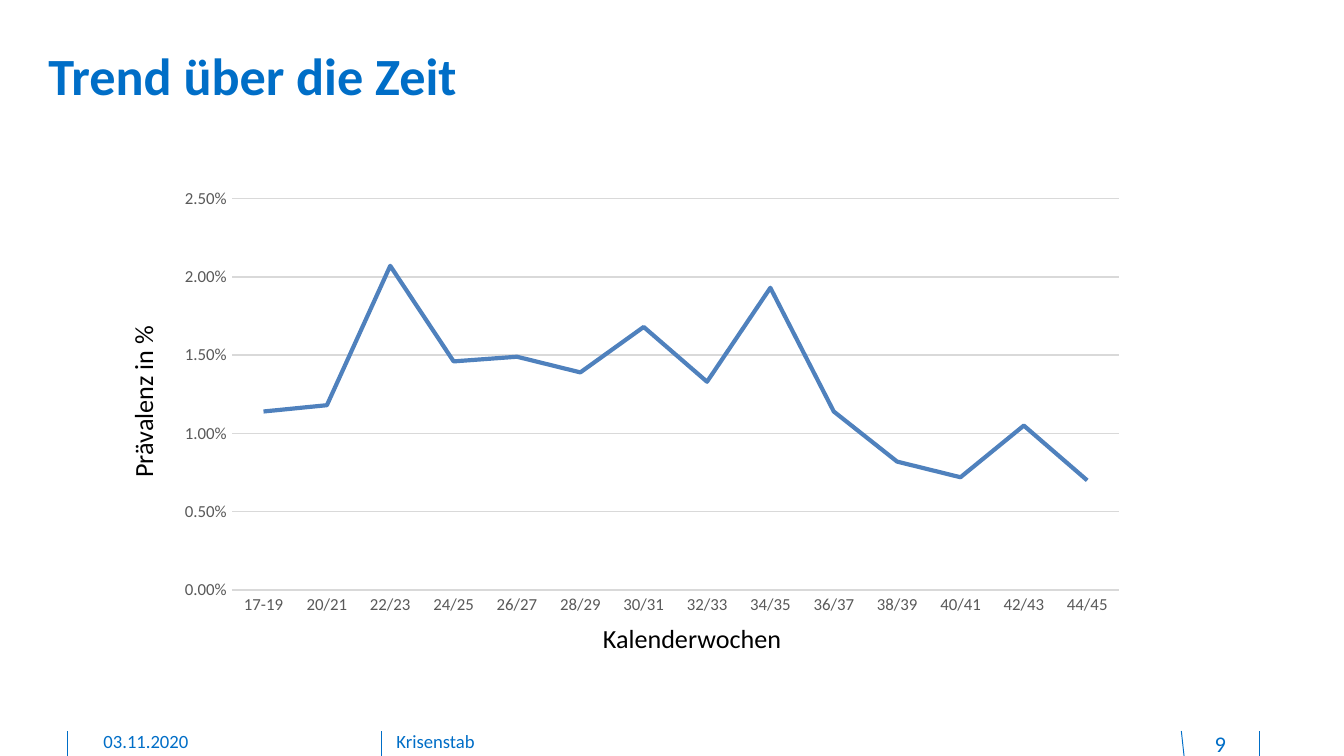
import pptx
import pptx.chart.data
import pptx.dml.color
import pptx.enum.chart
import pptx.enum.shapes
import pptx.enum.text
import pptx.oxml
import pptx.oxml.ns
import pptx.util

COLORS = {"blue": "006EC7", "series": "4F81BD", "grid": "D9D9D9", "label": "595959", "black": "000000"}
FONT = "Calibri"
ALIGN = pptx.enum.text.PP_ALIGN
WEEKS = ["17-19"] + [f"{w}/{w + 1}" for w in range(20, 45, 2)]
PREVALENCE = [0.0114, 0.0118, 0.0207, 0.0146, 0.0149, 0.0139, 0.0168,
              0.0133, 0.0193, 0.0114, 0.0082, 0.0072, 0.0105, 0.007]


def rgb(name):
    """Return the palette colour of that name."""
    return pptx.dml.color.RGBColor.from_string(COLORS[name])


def share(box, x, y, w, h):
    """Return the part of a box given in percent of its size."""
    left, top, width, height = box
    return (round(left + width * x / 100), round(top + height * y / 100),
            round(width * w / 100), round(height * h / 100))


def set_font(font, size, color, bold=False):
    """Apply the deck's font with the given size and colour."""
    values = {"name": FONT, "size": pptx.util.Pt(size), "bold": bold}
    for name, value in values.items():
        setattr(font, name, value)
    font.color.rgb = rgb(color)


def set_line(line, color, width):
    """Give a line its colour and width."""
    line.color.rgb = rgb(color)
    line.width = pptx.util.Pt(width)


def add_text(s, box, text, size, color, align=ALIGN.LEFT, bold=False, margins=(0, 0, 0, 0)):
    """Add a one-line text box and return it."""
    sp = s.shapes.add_textbox(*box)
    tf = sp.text_frame
    tf.word_wrap = True
    for side, margin in zip(("left", "top", "right", "bottom"), margins):
        setattr(tf, f"margin_{side}", pptx.util.Inches(margin))
    p = tf.paragraphs[0]
    p.alignment = align
    r = p.add_run()
    r.text = text
    set_font(r.font, size, color, bold)
    return sp


def add_header(s, box):
    """Place the slide title."""
    add_text(s, share(box, 3.6, 40.6, 88.5, 59.4), "Trend über die Zeit", 28, "blue", bold=True)


def add_trend(s, box):
    """Place the line chart with its two axis titles."""
    data = pptx.chart.data.CategoryChartData(number_format="0.00%")
    data.categories = WEEKS
    data.add_series("Series 1", PREVALENCE)
    kind = pptx.enum.chart.XL_CHART_TYPE.LINE
    chart = s.shapes.add_chart(kind, *share(box, 12.3, 0, 72.4, 92.2), data).chart
    chart.has_legend = chart.has_title = False
    set_font(chart.font, 10, "black")

    plot = chart.plots[0]
    plot.vary_by_categories = False
    series = plot.series[0]
    series.smooth = False
    set_line(series.format.line, "series", 2.25)

    for axis in (chart.category_axis, chart.value_axis):
        axis.major_tick_mark = pptx.enum.chart.XL_TICK_MARK.NONE
        set_font(axis.tick_labels.font, 9, "label")
    set_line(chart.category_axis.format.line, "grid", 0.75)

    axis = chart.value_axis
    axis.format.line.fill.background()
    set_line(axis.major_gridlines.format.line, "grid", 0.75)
    axis.tick_labels.number_format = "0.00%"
    axis.tick_labels.number_format_is_linked = False

    titles = [("Kalenderwochen", (37.6, 90.5, 27.8, 9.5), 0),
              ("Prävalenz in %", (-3.2, 41.3, 27.7, 9.5), 270)]
    for text, part, rotation in titles:
        sp = add_text(s, share(box, *part), text, 14, "black", ALIGN.CENTER,
                      margins=(0.1, 0.05, 0.1, 0.05))
        sp.rotation = rotation


def add_footer(s, box):
    """Place the footer's dividers, date, name and page number."""
    for x, lean in ((5, 0), (28.4, 0), (87.9, 0.2), (93.7, 0)):
        left, top, width, height = share(box, x, 3, lean, 97)
        line = s.shapes.add_connector(pptx.enum.shapes.MSO_CONNECTOR.STRAIGHT,
                                      left, top, left + width, top + height)
        set_line(line.line, "blue", 0.5)
        line._element.spPr.append(pptx.oxml.parse_xml(
            f"<a:effectLst {pptx.oxml.ns.nsdecls('a')}/>"))

    texts = [("9", 88.1, 5.4, 12, ALIGN.CENTER),
             ("03.11.2020", 7.7, 17.8, 10, ALIGN.LEFT),
             ("Krisenstab", 29.5, 56.7, 10, ALIGN.LEFT)]
    for text, x, width, size, align in texts:
        add_text(s, share(box, x, 0, width, 84), text, size, "blue", align,
                 margins=(0, 0, 0, 0.05))


def main():
    """Build the slide and save it."""
    prs = pptx.Presentation()
    prs.slide_width = pptx.util.Inches(10)
    prs.slide_height = prs.slide_width * 9 // 16
    s = prs.slides.add_slide(prs.slide_layouts[6])
    page = (0, 0, prs.slide_width, prs.slide_height)
    add_header(s, share(page, 0, 0, 100, 14))
    add_trend(s, share(page, 0, 23.8, 100, 63.7))
    add_footer(s, share(page, 0, 96.6, 100, 3.4))
    prs.save("out.pptx")


if __name__ == "__main__":
    main()
